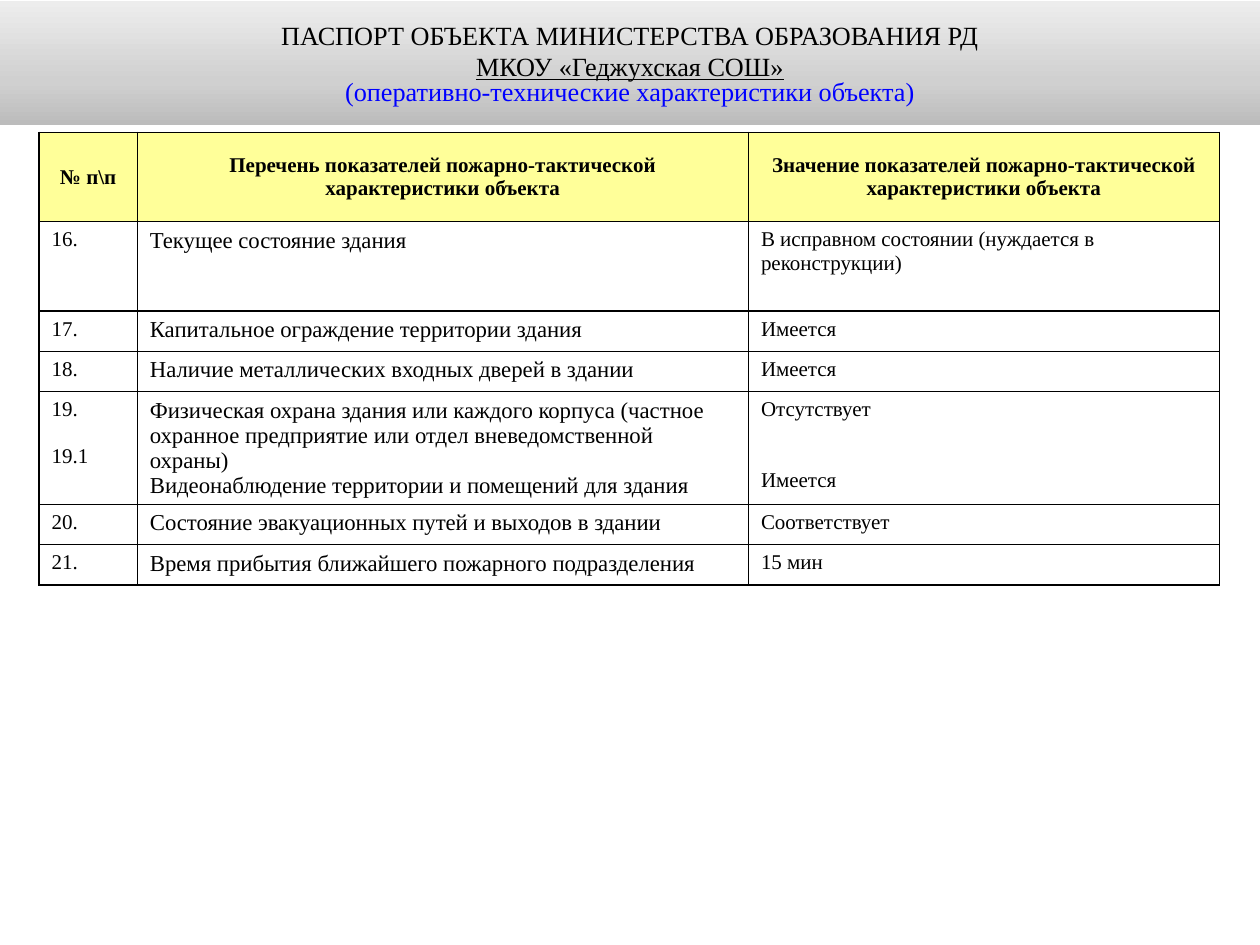
from copy import deepcopy

from lxml import etree
from pptx import Presentation
from pptx.dml.color import RGBColor
from pptx.enum.text import MSO_ANCHOR, MSO_AUTO_SIZE, PP_ALIGN
from pptx.oxml.ns import qn
from pptx.util import Inches, Pt

LEFT, CENTER = PP_ALIGN.LEFT, PP_ALIGN.CENTER
TOP, MIDDLE = MSO_ANCHOR.TOP, MSO_ANCHOR.MIDDLE
FIXED = MSO_AUTO_SIZE.NONE

HEADS = [
    "№ п\\п",
    "Перечень показателей пожарно-тактической характеристики объекта",
    "Значение показателей пожарно-тактической характеристики объекта",
]
ROWS = [
    ("16.", "Текущее состояние здания",
     "В исправном состоянии (нуждается в реконструкции)"),
    ("17.", "Капитальное ограждение территории здания", "Имеется"),
    ("18.", "Наличие металлических входных дверей в здании", "Имеется"),
    ("19.\n19.1",
     "Физическая охрана здания или каждого корпуса (частное охранное "
     "предприятие или отдел вневедомственной охраны)\n"
     "Видеонаблюдение территории и помещений для здания",
     "Отсутствует\nИмеется"),
    ("20.", "Состояние эвакуационных путей и выходов в здании",
     "Соответствует"),
    ("21.", "Время прибытия ближайшего пожарного подразделения", "15 мин"),
]
WIDTHS = [0.78, 4.85, 3.74]
HEIGHTS = [0.71, 0.71, 0.32, 0.32, 0.89, 0.32, 0.32]
SIZES = [12, 13, 12]
GAPS = [13.5, 0, 27]


def color(text):
    return RGBColor.from_string(text)


class Deck:
    font = "Times New Roman"
    ink = "000000"

    def __init__(self, wide, high):
        self.prs = Presentation()
        self.prs.slide_width = Inches(wide)
        self.prs.slide_height = Inches(high)
        self.slide = self.prs.slides.add_slide(self.prs.slide_layouts[5])

    def text(self, para, words, size, tint=ink, align=LEFT, gap=0, **form):
        para.alignment = align
        para.space_before = Pt(gap)
        run = para.add_run()
        run.text = words
        run.font.color.rgb = color(tint)
        for name, value in {"name": self.font, "size": Pt(size), **form}.items():
            setattr(run.font, name, value)

    def shade(self, shape, stops):
        shape.fill.gradient()
        shape.fill.gradient_angle = 90
        group = shape.element.spPr.find(qn("a:gradFill")).find(qn("a:gsLst"))
        group.append(deepcopy(group[0]))
        for stop, (place, tint) in zip(shape.fill.gradient_stops, stops):
            stop.position = place
            stop.color.rgb = color(tint)

    def title(self, box, lines, stops):
        shape = self.slide.shapes.title
        for name, value in zip(("left", "top", "width", "height"), box):
            setattr(shape, name, Inches(value))
        self.shade(shape, stops)
        frame = shape.text_frame
        form = {"auto_size": FIXED, "word_wrap": True,
                "vertical_anchor": MIDDLE,
                "margin_left": Inches(0.09), "margin_right": Inches(0.09)}
        for name, value in form.items():
            setattr(frame, name, value)
        for i, (words, space, style) in enumerate(lines):
            para = frame.add_paragraph() if i else frame.paragraphs[0]
            para.line_spacing = space
            self.text(para, words, 15, align=CENTER, **style)

    def border(self, cell):
        props = cell._tc.get_or_add_tcPr()
        for i, side in enumerate(("lnL", "lnR", "lnT", "lnB")):
            line = etree.Element(qn("a:" + side), w=str(Pt(1)))
            solid = etree.SubElement(line, qn("a:solidFill"))
            etree.SubElement(solid, qn("a:srgbClr"), val=self.ink)
            props.insert(i, line)

    def cell(self, cell, words, size, fill, anchor=TOP, gap=0, **form):
        cell.fill.solid()
        cell.fill.fore_color.rgb = color(fill)
        cell.vertical_anchor = anchor
        self.border(cell)
        frame = cell.text_frame
        for i, part in enumerate(words.split("\n")):
            para = frame.add_paragraph() if i else frame.paragraphs[0]
            self.text(para, part, size, gap=gap if i else 0, **form)

    def table(self, left, top):
        size = [Inches(sum(WIDTHS)), Inches(sum(HEIGHTS))]
        table = self.slide.shapes.add_table(
            len(HEIGHTS), len(WIDTHS), Inches(left), Inches(top), *size).table
        for col, width in zip(table.columns, WIDTHS):
            col.width = Inches(width)
        for row, height in zip(table.rows, HEIGHTS):
            row.height = Inches(height)
        for c, words in enumerate(HEADS):
            self.cell(table.cell(0, c), words, 12, "FFFF99", MIDDLE,
                      align=CENTER, bold=True)
        for r, row in enumerate(ROWS, 1):
            for c, words in enumerate(row):
                self.cell(table.cell(r, c), words, SIZES[c], "FFFFFF",
                          gap=GAPS[c], bold=False)


def main():
    deck = Deck(10, 7.5)
    deck.table(0.31, 1.05)
    deck.title(
        (0, 0.01, 10, 0.98),
        [("ПАСПОРТ ОБЪЕКТА МИНИСТЕРСТВА ОБРАЗОВАНИЯ РД", 1, {}),
         ("МКОУ «Геджухская СОШ»", 1, {"underline": True}),
         ("(оперативно-технические характеристики объекта)", 0.8,
          {"tint": "0000FF"})],
        [(0, "BCBCBC"), (0.35, "D0D0D0"), (1, "EDEDED")])
    deck.prs.save("out.pptx")


if __name__ == "__main__":
    main()
